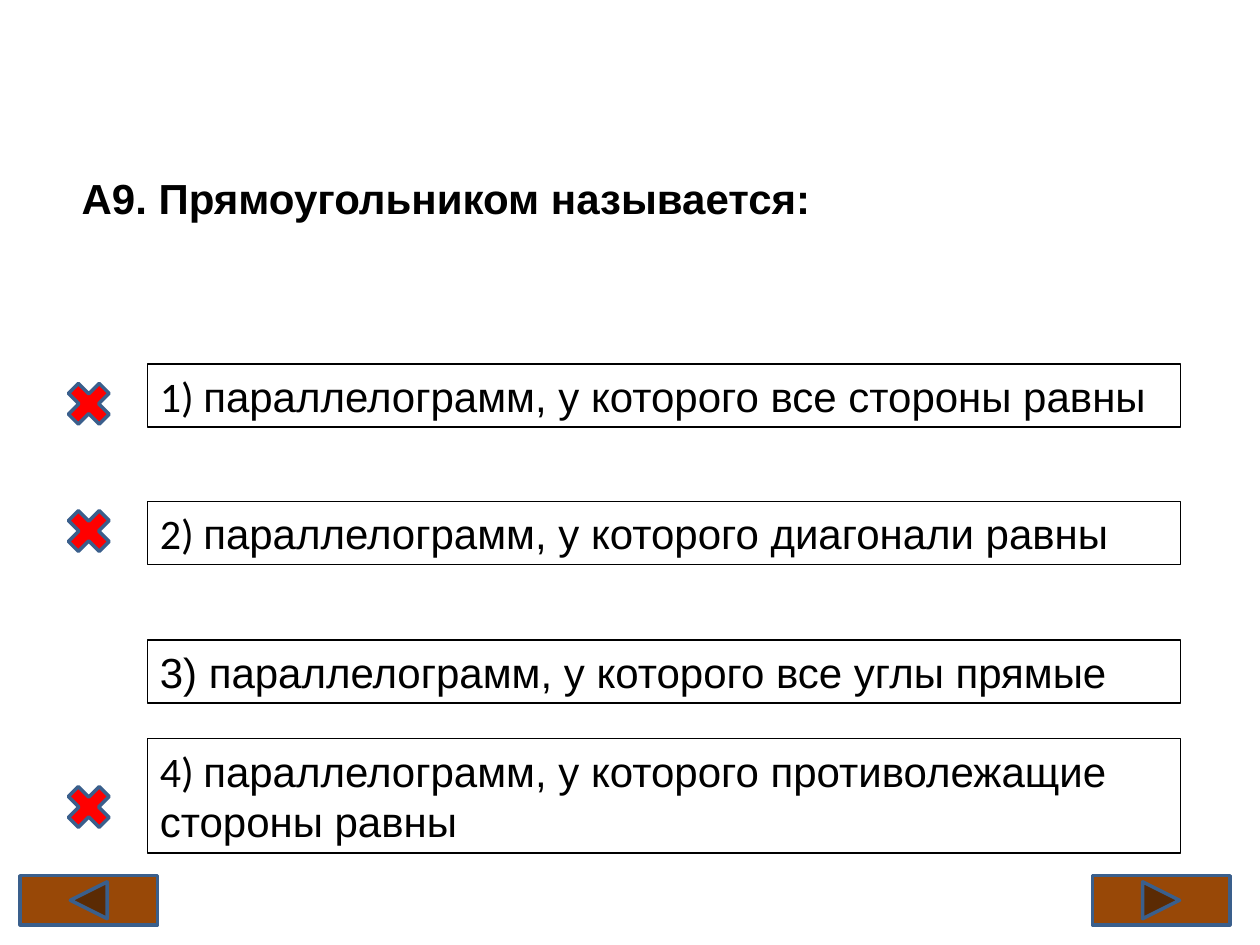
from pptx import Presentation
from pptx.dml.color import RGBColor
from pptx.enum.shapes import MSO_SHAPE
from pptx.enum.text import MSO_ANCHOR, PP_ALIGN
from pptx.util import Inches, Pt

RECTANGLE = MSO_SHAPE.RECTANGLE
CROSS = MSO_SHAPE.MATH_MULTIPLY
BACK = MSO_SHAPE.ACTION_BUTTON_BACK_OR_PREVIOUS
FORWARD = MSO_SHAPE.ACTION_BUTTON_FORWARD_OR_NEXT
MIDDLE = MSO_ANCHOR.MIDDLE
LEFT, JUSTIFY = PP_ALIGN.LEFT, PP_ALIGN.JUSTIFY

COLORS = {"text": "000000", "cross": "FF0000", "button": "984807", "outline": "3A5F8C"}

QUESTION = "А9. Прямоугольником называется:"
# top, height, number, number font, answer
ANSWERS = [
    (2.89, 0.5, "1) ", "Calibri", "параллелограмм, у которого все стороны равны"),
    (3.98, 0.5, "2) ", "Calibri", "параллелограмм, у которого диагонали равны"),
    (5.08, 0.5, "3) ", "Arial", "параллелограмм, у которого все углы прямые"),
    (5.86, 0.91, "4) ", "Calibri", "параллелограмм, у которого противолежащие стороны равны"),
]
CROSS_TOPS = [2.97, 3.98, 6.17]
BUTTONS = [(FORWARD, 8.67), (BACK, 0.16)]


def color(name):
    return RGBColor.from_string(COLORS[name])


def add_outlined(slide, kind, box, fill, line, line_width):
    shape = slide.shapes.add_shape(kind, *map(Inches, box))
    shape.shadow.inherit = False
    if fill:
        shape.fill.solid()
        shape.fill.fore_color.rgb = color(fill)
    else:
        shape.fill.background()
    shape.line.color.rgb = color(line)
    shape.line.width = Pt(line_width)
    return shape


def write_line(shape, runs, alignment, bold=False):
    """Fill the shape with one paragraph made of (text, font name) runs."""
    frame = shape.text_frame
    frame.word_wrap = True
    frame.vertical_anchor = MIDDLE
    paragraph = frame.paragraphs[0]
    paragraph.alignment = alignment
    for text, font_name in runs:
        run = paragraph.add_run()
        run.text = text
        run.font.name = font_name
        run.font.size = Pt(24)
        run.font.bold = bold
        run.font.color.rgb = color("text")


def main():
    presentation = Presentation()
    presentation.slide_width = Inches(10)
    presentation.slide_height = Inches(7.5)
    slide = presentation.slides.add_slide(presentation.slide_layouts[6])

    title = slide.shapes.add_textbox(*map(Inches, (0.55, 0.47, 9, 2.19)))
    write_line(title, [(QUESTION, "Arial")], JUSTIFY, bold=True)

    for top, height, number, number_font, answer in ANSWERS:
        box = add_outlined(slide, RECTANGLE, (1.17, top, 8.2, height), None, "text", 0.75)
        write_line(box, [(number, number_font), (answer, "Arial")], LEFT)

    for top in CROSS_TOPS:
        add_outlined(slide, CROSS, (0.47, top, 0.47, 0.47), "cross", "outline", 2)

    for kind, left in BUTTONS:
        add_outlined(slide, kind, (left, 6.95, 1.09, 0.39), "button", "outline", 2)

    presentation.save("out.pptx")


if __name__ == "__main__":
    main()
